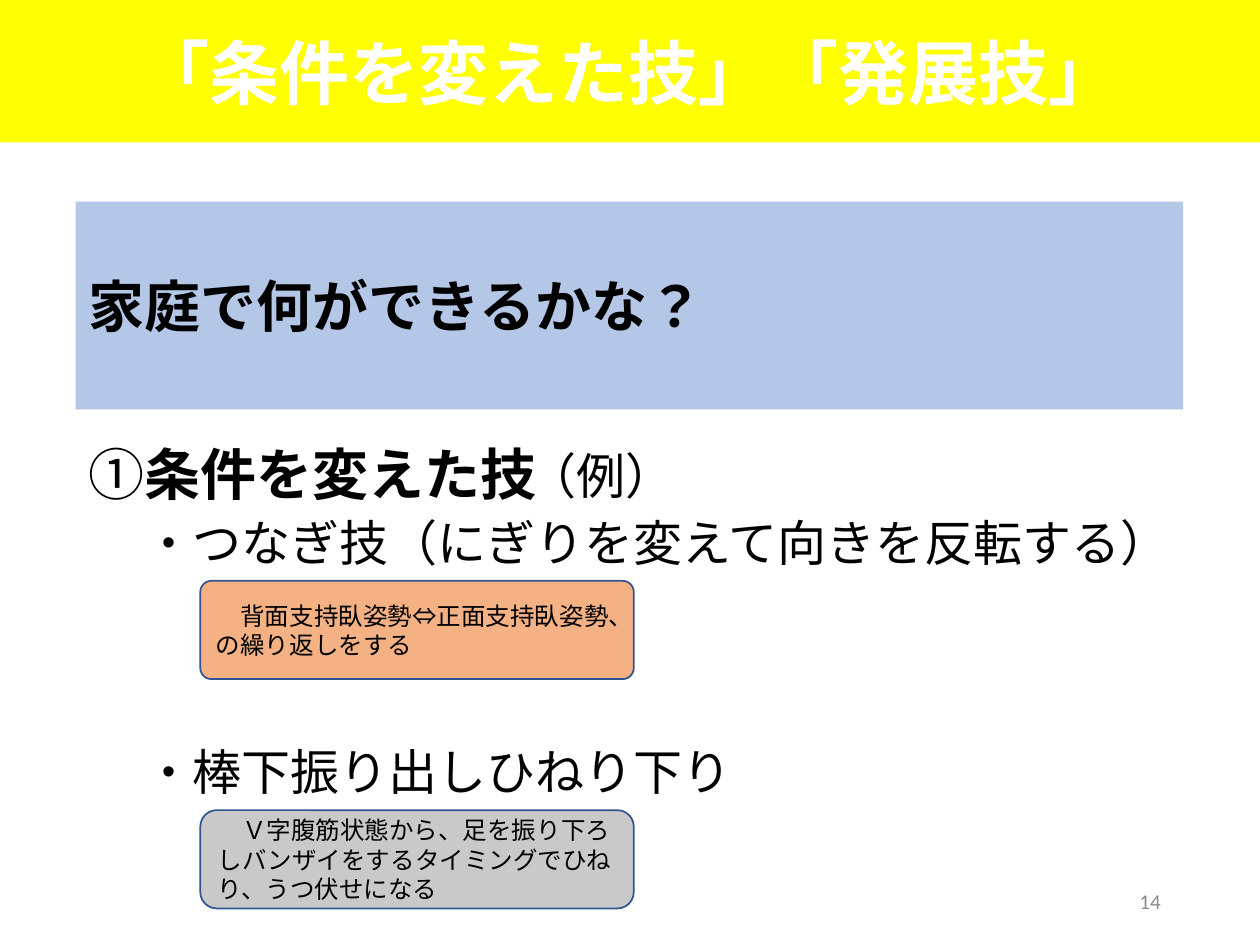
from dataclasses import dataclass

from lxml.etree import SubElement
from pptx import Presentation
from pptx.dml.color import RGBColor
from pptx.enum.lang import MSO_LANGUAGE_ID
from pptx.enum.shapes import MSO_SHAPE
from pptx.enum.text import MSO_ANCHOR, PP_ALIGN
from pptx.oxml.ns import qn
from pptx.util import Inches, Pt

WHITE = RGBColor(0xFF, 0xFF, 0xFF)
BLACK = RGBColor(0, 0, 0)
YELLOW = RGBColor(0xFF, 0xFF, 0)
BLUE = RGBColor(0xB4, 0xC7, 0xE7)
ORANGE = RGBColor(0xF4, 0xB1, 0x83)
SILVER = RGBColor(0xC9, 0xC9, 0xC9)
NAVY = RGBColor(0x32, 0x54, 0x91)
GRAY = RGBColor(0x8C, 0x8C, 0x8C)
LATIN_FONT = "Calibri"
JAPANESE_FONT = "Noto Sans CJK JP"

LEFT = 0.6
LINE_WIDTH = 9.25


@dataclass(frozen=True)
class Technique:
    """A bulleted technique with its worked example in a box below."""
    top: float
    name: str
    example: str
    fill: RGBColor
    corner: float


TECHNIQUES = [
    Technique(4.09, "・つなぎ技（にぎりを変えて向きを反転する）",
              "　背面支持臥姿勢⇔正面支持臥姿勢、の繰り返しをする", ORANGE, 0.113),
    Technique(5.91, "・棒下振り出しひねり下り",
              "　Ｖ字腹筋状態から、足を振り下ろしバンザイをするタイミングでひねり、うつ伏せになる",
              SILVER, 0.167),
]


def add_text(box, text: str, *, size: float, color: RGBColor = BLACK,
             bold: bool = False, font: str = LATIN_FONT,
             align: PP_ALIGN = PP_ALIGN.LEFT) -> None:
    """Append a formatted span to the first paragraph of the box."""
    para = box.text_frame.paragraphs[0]
    para.alignment = align
    span = para.add_run()
    span.text = text
    span.font.size = Pt(size)
    span.font.bold = bold
    span.font.color.rgb = color
    span.font.name = font
    span.font.language_id = MSO_LANGUAGE_ID.JAPANESE
    latin = span.font._element.find(qn("a:latin"))
    east_asian = SubElement(latin.getparent(), qn("a:ea"))
    east_asian.set("typeface", JAPANESE_FONT)
    latin.addnext(east_asian)


def set_frame(box, wrap: bool = True) -> None:
    box.text_frame.word_wrap = wrap
    box.text_frame.vertical_anchor = MSO_ANCHOR.MIDDLE


def add_panel(page, left: float, top: float, width: float, height: float,
              fill: RGBColor, kind: MSO_SHAPE = MSO_SHAPE.RECTANGLE):
    box = page.shapes.add_shape(kind, Inches(left), Inches(top),
                                Inches(width), Inches(height))
    box.shadow.inherit = False
    box.fill.solid()
    box.fill.fore_color.rgb = fill
    box.line.fill.background()
    set_frame(box)
    return box


def add_label(page, left: float, top: float, width: float, height: float):
    box = page.shapes.add_textbox(Inches(left), Inches(top),
                                  Inches(width), Inches(height))
    set_frame(box)
    return box


def add_title(page) -> None:
    banner = add_panel(page, -0.02, 0, 10.02, 1.13, YELLOW)
    set_frame(banner, wrap=False)
    frame = banner.text_frame
    frame.margin_left = frame.margin_right = Inches(0.07)
    frame.margin_top = frame.margin_bottom = Inches(0.04)
    add_text(banner, "「条件を変えた技」「発展技」", size=40, color=WHITE,
             bold=True, font=JAPANESE_FONT, align=PP_ALIGN.CENTER)


def add_technique_name(page, technique: Technique) -> None:
    line = add_panel(page, LEFT, technique.top, LINE_WIDTH, 0.38, WHITE)
    add_text(line, "　", size=32)
    add_text(line, technique.name, size=28)


def add_example(page, technique: Technique) -> None:
    box = add_panel(page, 1.59, technique.top + 0.52, 3.44, 0.78,
                    technique.fill, MSO_SHAPE.ROUNDED_RECTANGLE)
    box.adjustments[0] = technique.corner
    box.line.color.rgb = NAVY
    box.line.width = Pt(1)
    add_text(box, technique.example, size=14)


def main() -> None:
    deck = Presentation()
    deck.slide_width, deck.slide_height = Inches(10), Inches(7.5)
    page = deck.slides.add_slide(deck.slide_layouts[6])

    add_title(page)
    page_number = add_label(page, 7.06, 6.95, 2.25, 0.4)
    add_text(page_number, "14", size=12, color=GRAY, align=PP_ALIGN.RIGHT)

    question = add_panel(page, LEFT, 1.6, 8.79, 1.65, BLUE)
    add_text(question, "家庭で何ができるかな？", size=32, bold=True)

    heading = add_panel(page, LEFT, 3.42, LINE_WIDTH, 0.67, WHITE)
    add_text(heading, "①", size=32)
    add_text(heading, "条件を変えた技", size=32, bold=True)
    add_text(add_label(page, 4.09, 3.58, 1.42, 0.38), "（例）", size=28)

    for technique in TECHNIQUES:
        add_technique_name(page, technique)
        add_example(page, technique)

    deck.save("out.pptx")


if __name__ == "__main__":
    main()
